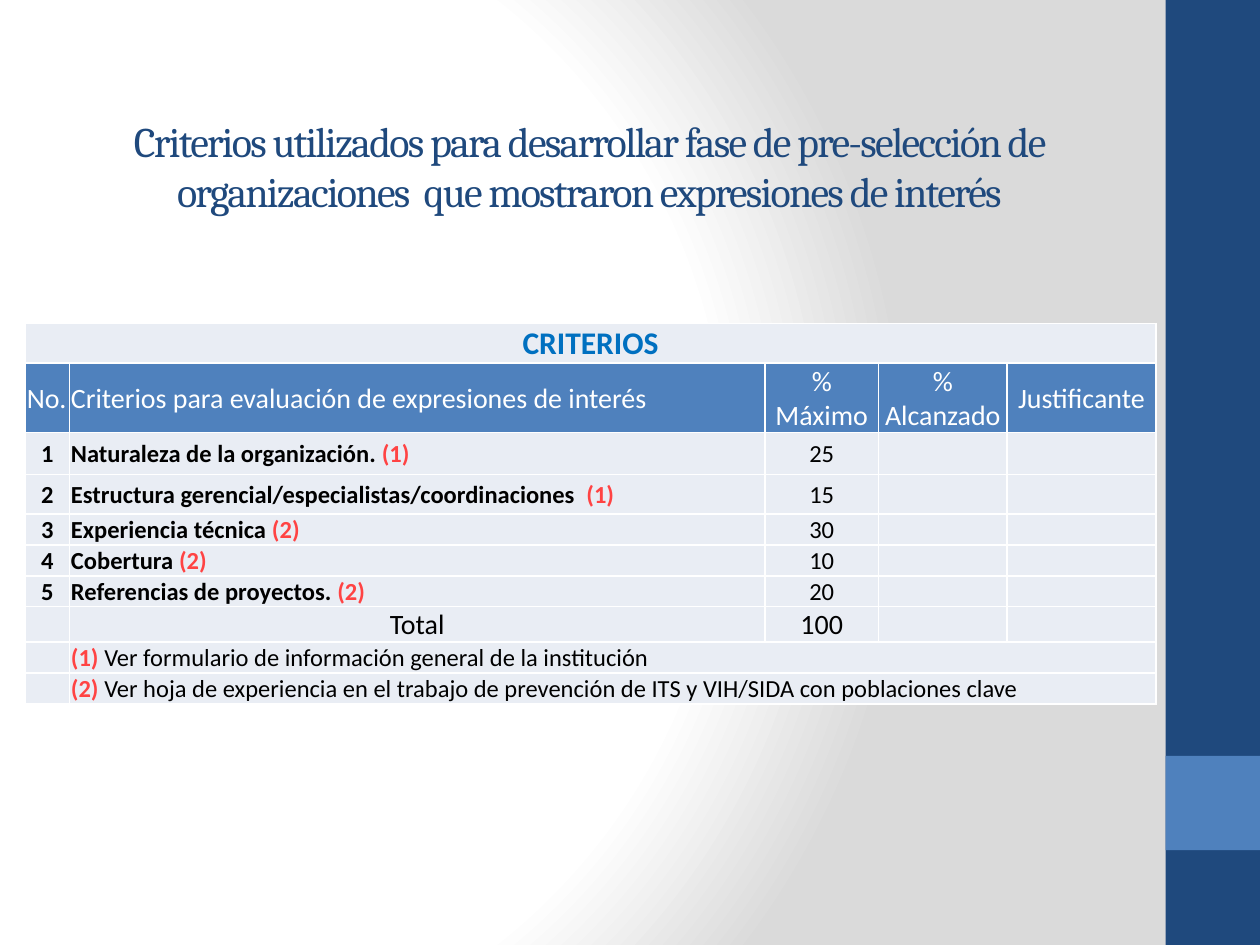
"""Build the slide with the criteria for pre-selecting organizations."""
import dataclasses

import lxml.etree
import pptx
import pptx.dml.color
import pptx.enum.shapes
import pptx.enum.text
import pptx.oxml
import pptx.oxml.ns
import pptx.util

Cm = pptx.util.Cm
CENTER = pptx.enum.text.PP_ALIGN.CENTER
LEFT = pptx.enum.text.PP_ALIGN.LEFT
MIDDLE = pptx.enum.text.MSO_ANCHOR.MIDDLE
qn = pptx.oxml.ns.qn


@dataclasses.dataclass(frozen=True)
class Theme:
    navy: str = "1F497D"
    blue: str = "4F81BD"
    heading: str = "0070C0"
    pale: str = "E9EDF4"
    white: str = "FFFFFF"
    gray: str = "DADADA"
    black: str = "000000"
    red: str = "FF4343"
    title_font: str = "Cambria"
    body_font: str = "Calibri"
    title_size: int = 24
    heading_size: int = 18
    header_size: int = 16
    body_size: int = 14


theme = Theme()


def rgb(color):
    return pptx.dml.color.RGBColor.from_string(color)


def write(paragraph, text, size=theme.body_size, color=theme.black, bold=False,
          font=theme.body_font, align=LEFT, spacing=None):
    paragraph.alignment = align
    run = paragraph.add_run()
    run.text = text
    run.font.name = font
    run.font.size = pptx.util.Pt(size)
    run.font.bold = bold
    run.font.color.rgb = rgb(color)
    if spacing is not None:
        run.font._element.set("spc", str(spacing * 100))


presentation = pptx.Presentation()
presentation.slide_width = Cm(25.4)
presentation.slide_height = Cm(19.05)
slide = presentation.slides.add_slide(presentation.slide_layouts[6])

stops = "".join(
    f'<a:gs pos="{position * 1000}"><a:srgbClr val="{color}"/></a:gs>'
    for position, color in ((0, theme.white), (75, theme.white), (100, theme.gray)))
background = pptx.oxml.parse_xml(
    f'<p:bg {pptx.oxml.ns.nsdecls("p", "a")}><p:bgPr><a:gradFill rotWithShape="1">'
    f'<a:gsLst>{stops}</a:gsLst><a:path path="circle">'
    '<a:fillToRect l="20000" t="50000" r="100000" b="50000"/></a:path>'
    '</a:gradFill><a:effectLst/></p:bgPr></p:bg>')
slide._element.cSld.insert(0, background)

for top, height, color in ((0, 19.05, theme.navy), (15.24, 1.9, theme.blue)):
    band = slide.shapes.add_shape(pptx.enum.shapes.MSO_SHAPE.RECTANGLE,
                                  Cm(23.5), Cm(top), Cm(1.9), Cm(height))
    band.shadow.inherit = False
    band.fill.solid()
    band.fill.fore_color.rgb = rgb(color)
    band.line.fill.background()

title = slide.shapes.add_textbox(Cm(1.3), Cm(2.34), Cm(21.16), Cm(2)).text_frame
title.word_wrap = True
title.vertical_anchor = MIDDLE
write(title.paragraphs[0],
      "Criterios utilizados para desarrollar fase de pre-selección de "
      "organizaciones  que mostraron expresiones de interés",
      size=theme.title_size, color=theme.navy, font=theme.title_font,
      align=CENTER, spacing=-1)

criteria = [
    ("Naturaleza de la organización. ", "(1)", "25"),
    ("Estructura gerencial/especialistas/coordinaciones  ", "(1)", "15"),
    ("Experiencia técnica ", "(2)", "30"),
    ("Cobertura ", "(2)", "10"),
    ("Referencias de proyectos. ", "(2)", "20"),
]
headers = ["No.", "Criterios para evaluación de expresiones de interés",
           "% Máximo", "% Alcanzado", "Justificante"]
notes = [
    ("(1) ", "Ver formulario de información general de la institución"),
    ("(2) ", "Ver hoja de experiencia en el trabajo de prevención de ITS y "
             "VIH/SIDA con poblaciones clave"),
]
column_widths = [0.89, 14.02, 2.29, 2.59, 3]
row_heights = [0.8, 1.4, 0.85, 0.79, 0.62, 0.62, 0.62, 0.71, 0.61, 0.61]
header_row, total_row = 1, 2 + len(criteria)

grid = slide.shapes.add_table(len(row_heights), len(column_widths), Cm(0.51), Cm(6.52),
                              Cm(sum(column_widths)), Cm(sum(row_heights))).table
grid.first_row = False
grid.horz_banding = False
for column, width in zip(grid.columns, column_widths):
    column.width = Cm(width)
for row, height in zip(grid.rows, row_heights):
    row.height = Cm(height)

for row_index, row in enumerate(grid.rows):
    for cell in row.cells:
        cell.margin_left = cell.margin_right = cell.margin_top = Cm(0.03)
        cell.margin_bottom = 0
        cell.vertical_anchor = MIDDLE
        for side in ("lnL", "lnR", "lnT", "lnB"):
            border = lxml.etree.SubElement(cell._tc.tcPr, qn(f"a:{side}"), w="12700")
            border_fill = lxml.etree.SubElement(border, qn("a:solidFill"))
            lxml.etree.SubElement(border_fill, qn("a:srgbClr"), val=theme.white)
        cell.fill.solid()
        cell.fill.fore_color.rgb = rgb(theme.blue if row_index == header_row else theme.pale)

grid.cell(0, 0).merge(grid.cell(0, 4))
write(grid.cell(0, 0).text_frame.paragraphs[0], "CRITERIOS", size=theme.heading_size,
      color=theme.heading, bold=True, align=CENTER)

for column_index, header in enumerate(headers):
    write(grid.cell(header_row, column_index).text_frame.paragraphs[0], header,
          size=theme.header_size, color=theme.white,
          align=LEFT if column_index < 2 else CENTER)

for number, (criterion, reference, maximum) in enumerate(criteria, 1):
    number_text, criterion_text, maximum_text = (
        grid.cell(header_row + number, column_index).text_frame.paragraphs[0]
        for column_index in range(3))
    write(number_text, str(number), bold=True, align=CENTER)
    write(criterion_text, criterion, bold=True)
    write(criterion_text, reference, color=theme.red, bold=True)
    write(maximum_text, maximum, align=CENTER)

for column_index, total in enumerate(("Total", "100"), 1):
    write(grid.cell(total_row, column_index).text_frame.paragraphs[0], total,
          size=theme.header_size, align=CENTER)

for row_index, (reference, note) in enumerate(notes, total_row + 1):
    grid.cell(row_index, 1).merge(grid.cell(row_index, 4))
    note_text = grid.cell(row_index, 1).text_frame.paragraphs[0]
    write(note_text, reference, color=theme.red, bold=True)
    write(note_text, note)

for cell in grid.iter_cells():
    if not cell.text_frame.text:
        lxml.etree.SubElement(cell.text_frame.paragraphs[0]._p, qn("a:endParaRPr"),
                              sz=str(theme.body_size * 100))

presentation.save("out.pptx")
